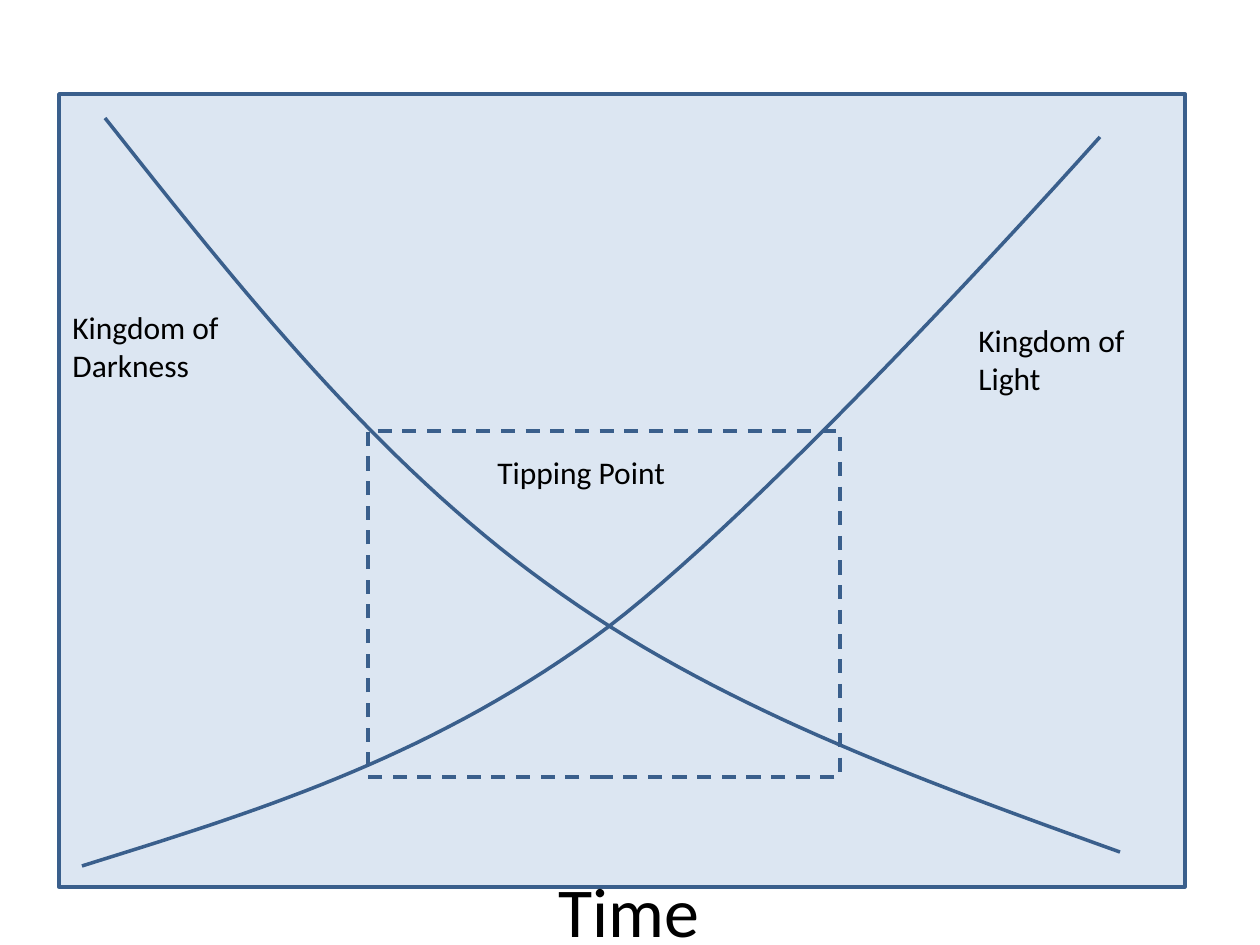
from dataclasses import dataclass

from lxml import etree
from pptx import Presentation
from pptx.dml.color import RGBColor
from pptx.enum.dml import MSO_LINE
from pptx.enum.shapes import MSO_SHAPE
from pptx.enum.text import MSO_AUTO_SIZE
from pptx.oxml.ns import qn
from pptx.util import Emu, Pt

RECTANGLE = MSO_SHAPE.RECTANGLE
DASH = MSO_LINE.DASH
GROW = MSO_AUTO_SIZE.SHAPE_TO_FIT_TEXT
PX_PER_INCH = 126
EMU_PER_PX = 914400 / PX_PER_INCH
SLIDE_WIDTH, SLIDE_HEIGHT = 1260, 945
OUTLINE = "3A5F8C"
PANEL = "95B3D7"
PANEL_ALPHA = 32
INK = "000000"
CURVE_STEPS = 32

Point = tuple[int, int]


@dataclass(frozen=True)
class Box:
    left: int
    top: int
    width: int
    height: int


@dataclass(frozen=True)
class Label:
    text: str
    box: Box
    size: int = 18


PANEL_BOX = Box(59, 94, 1126, 793)
TIPPING_ZONE = Box(368, 431, 472, 346)

DARKNESS_CURVE = [
    (105, 118), (241, 290), (377, 461), (546, 583),
    (714, 706), (917, 779), (1120, 852),
]
LIGHT_CURVE = [
    (82, 866), (252, 813), (422, 761), (592, 639),
    (761, 518), (1100, 137), (1100, 137),
]

LABELS = [
    Label("Kingdom of Darkness", Box(60, 302, 223, 127)),
    Label("Kingdom of Light", Box(966, 315, 209, 127)),
    Label("Time", Box(546, 861, 420, 136), size=40),
    Label("Tipping Point", Box(485, 447, 238, 50)),
]


def px(length: float) -> Emu:
    return Emu(round(length * EMU_PER_PX))


def color(value: str) -> RGBColor:
    return RGBColor.from_string(value)


def place(box: Box) -> tuple[Emu, Emu, Emu, Emu]:
    return px(box.left), px(box.top), px(box.width), px(box.height)


def style_outline(shape) -> None:
    shape.shadow.inherit = False
    shape.line.color.rgb = color(OUTLINE)
    shape.line.width = Pt(2)


def add_frame(slide, box: Box, *, fill: str | None = None,
              alpha: int = 100, dash=None) -> None:
    frame = slide.shapes.add_shape(RECTANGLE, *place(box))
    style_outline(frame)
    if dash is not None:
        frame.line.dash_style = dash
    if fill is None:
        frame.fill.background()
        return
    frame.fill.solid()
    frame.fill.fore_color.rgb = color(fill)
    fill_color = frame.fill._xPr.find(qn("a:solidFill"))[0]
    etree.SubElement(fill_color, qn("a:alpha")).set("val", str(alpha * 1000))


def bezier(t: float, controls: list[Point]) -> tuple[Emu, Emu]:
    u = 1 - t
    weights = (u**3, 3 * u * u * t, 3 * u * t * t, t**3)
    x, y = (sum(w * c for w, c in zip(weights, axis)) for axis in zip(*controls))
    return px(x), px(y)


def add_curve(slide, points: list[Point]) -> None:
    vertices = [
        bezier(step / CURVE_STEPS, points[start:start + 4])
        for start in range(0, len(points) - 1, 3)
        for step in range(1, CURVE_STEPS + 1)
    ]
    x, y = points[0]
    builder = slide.shapes.build_freeform(px(x), px(y))
    builder.add_line_segments(vertices, close=False)
    curve = builder.convert_to_shape()
    style_outline(curve)
    curve.fill.background()


def add_text(slide, text: str, *, box: Box, size: int,
             font: str = "Calibri", ink: str = INK) -> None:
    frame = slide.shapes.add_textbox(*place(box)).text_frame
    frame.word_wrap = True
    frame.auto_size = GROW
    run = frame.paragraphs[0].add_run()
    run.text = text
    run.font.name = font
    run.font.size = Pt(size)
    run.font.color.rgb = color(ink)


def main() -> None:
    deck = Presentation()
    deck.slide_width, deck.slide_height = px(SLIDE_WIDTH), px(SLIDE_HEIGHT)
    slide = deck.slides.add_slide(deck.slide_layouts[6])

    add_frame(slide, PANEL_BOX, fill=PANEL, alpha=PANEL_ALPHA)
    add_curve(slide, DARKNESS_CURVE)
    add_frame(slide, TIPPING_ZONE, dash=DASH)
    add_curve(slide, LIGHT_CURVE)
    for label in LABELS:
        add_text(slide, label.text, box=label.box, size=label.size)

    deck.save("out.pptx")


if __name__ == "__main__":
    main()
